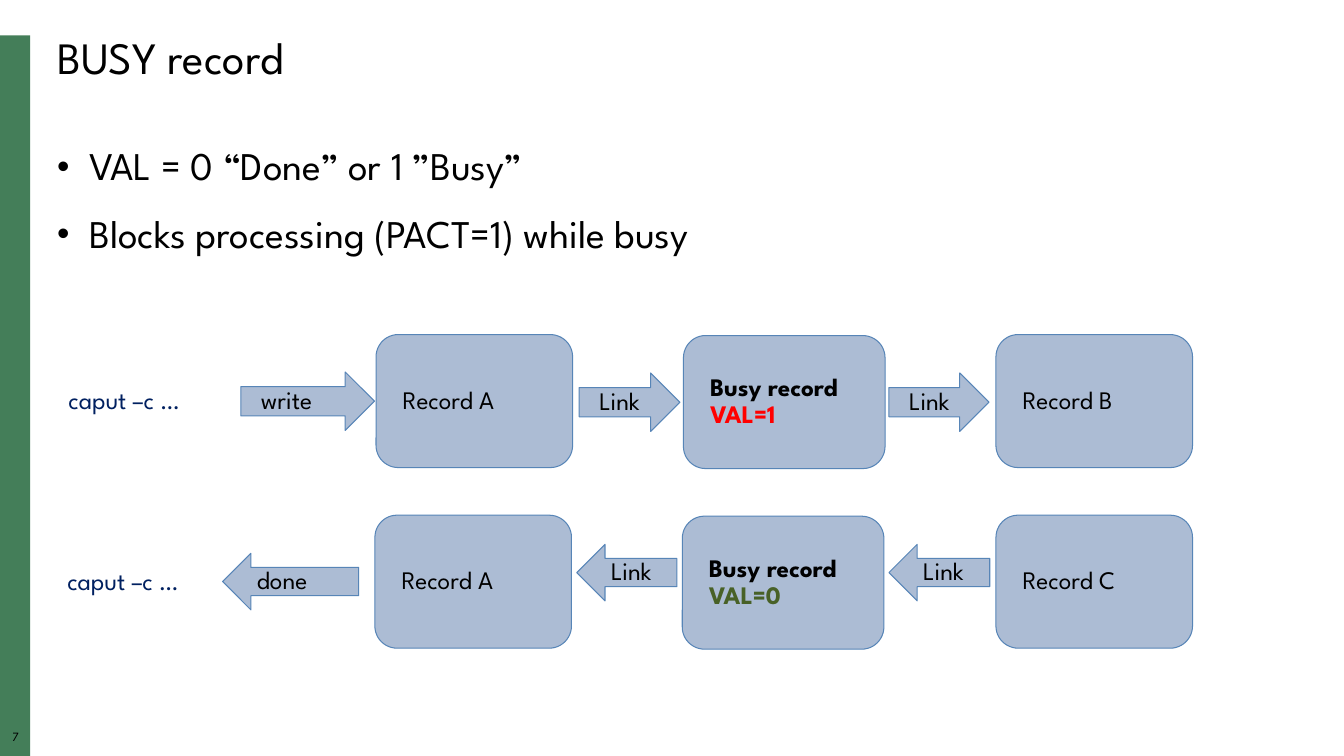
from lxml.etree import SubElement
from pptx import Presentation
from pptx.dml.color import RGBColor
from pptx.enum.shapes import MSO_SHAPE
from pptx.enum.text import MSO_ANCHOR, PP_ALIGN
from pptx.oxml.ns import qn
from pptx.util import Pt

FONT = "League Spartan"
BLACK = RGBColor(0x00, 0x00, 0x00)
GREEN_BAR = RGBColor(0x44, 0x7E, 0x59)
BOX_FILL = RGBColor(0xAC, 0xBC, 0xD4)
BOX_LINE = RGBColor(0x57, 0x85, 0xB7)
NAVY = RGBColor(0x00, 0x20, 0x60)
BUSY_RED = RGBColor(0xFF, 0x00, 0x00)
DONE_GREEN = RGBColor(0x48, 0x61, 0x27)

RECORD_HEIGHT = 95
RECORD_WIDTH = 140.4
BUSY_WIDTH = 144


def write_line(paragraph, text, size, color=BLACK, bold=False, align=PP_ALIGN.LEFT):
    paragraph.alignment = align
    paragraph.line_spacing = 0.9
    run = paragraph.add_run()
    run.text = text
    run.font.name = FONT
    run.font.size = Pt(size)
    run.font.bold = bold
    run.font.color.rgb = color


def set_insets(frame, inset):
    frame.margin_left = frame.margin_right = Pt(inset)
    frame.margin_top = frame.margin_bottom = Pt(inset)


def add_text_frame(slide, left, top, width, height):
    frame = slide.shapes.add_textbox(Pt(left), Pt(top), Pt(width), Pt(height)).text_frame
    frame.word_wrap = True
    return frame


def add_title(slide, text):
    title = slide.shapes.title
    title.left, title.top, title.width, title.height = Pt(33.8), Pt(21.6), Pt(900), Pt(42.5)
    title.text_frame.vertical_anchor = MSO_ANCHOR.MIDDLE
    write_line(title.text_frame.paragraphs[0], text, 32)


def add_bullet(paragraph):
    properties = paragraph._p.get_or_add_pPr()
    properties.set("marL", str(Pt(23)))
    properties.set("indent", str(-Pt(23)))
    color = SubElement(properties, qn("a:buClr"))
    SubElement(color, qn("a:srgbClr"), val=str(BLACK))
    SubElement(properties, qn("a:buSzPct"), val="90000")
    SubElement(properties, qn("a:buFont"), typeface="Arial")
    SubElement(properties, qn("a:buChar"), char="•")


def add_bullets(slide, points):
    frame = add_text_frame(slide, 33.8, 101.5, 900, 104.4)
    for index, point in enumerate(points):
        paragraph = frame.add_paragraph() if index else frame.paragraphs[0]
        add_bullet(paragraph)
        if index:
            paragraph.space_before = Pt(18)
        write_line(paragraph, point, 28)


def add_block(slide, kind, left, top, width, height, lines):
    """Draw a filled shape; lines holds (text, color, bold) for each paragraph."""
    block = slide.shapes.add_shape(kind, Pt(left), Pt(top), Pt(width), Pt(height))
    block.shadow.inherit = False
    block.fill.solid()
    block.fill.fore_color.rgb = BOX_FILL
    block.line.color.rgb = BOX_LINE
    block.line.width = Pt(0.75)
    frame = block.text_frame
    frame.word_wrap = True
    frame.vertical_anchor = MSO_ANCHOR.MIDDLE
    set_insets(frame, 14.4)
    for index, (text, color, bold) in enumerate(lines):
        paragraph = frame.add_paragraph() if index else frame.paragraphs[0]
        write_line(paragraph, text, 18, color, bold)


def add_flow(slide, top, shift, state, state_color, last_record, arrow_kind, arrow_height, arrows):
    """Draw one row: the command, three records and the arrows between them."""
    command = add_text_frame(slide, 41.8 + shift, top + 34.5, 117.4, 26.6)
    write_line(command.paragraphs[0], "caput –c …", 18, NAVY)

    records = [
        (268.6 + shift, 0, RECORD_WIDTH, [("Record A", BLACK, False)]),
        (488.2 + shift, 0.7, BUSY_WIDTH,
         [("Busy record", BLACK, True), (state, state_color, True)]),
        (711.4, 0, RECORD_WIDTH, [(last_record, BLACK, False)]),
    ]
    for left, drop, width, lines in records:
        add_block(slide, MSO_SHAPE.ROUNDED_RECTANGLE, left, top + drop, width,
                  RECORD_HEIGHT, lines)
    for label, left, drop, width in arrows:
        add_block(slide, arrow_kind, left, top + drop, width, arrow_height,
                  [(label, BLACK, False)])


def add_side_bar(slide, page):
    bar = slide.shapes.add_shape(MSO_SHAPE.RECTANGLE, 0, Pt(25.2), Pt(21.6), Pt(514.8))
    bar.shadow.inherit = False
    bar.fill.solid()
    bar.fill.fore_color.rgb = GREEN_BAR
    bar.line.fill.background()
    number = add_text_frame(slide, 0, 522, 22.3, 12.2)
    set_insets(number, 0)
    write_line(number.paragraphs[0], page, 9, align=PP_ALIGN.CENTER)


def main():
    deck = Presentation()
    deck.slide_width, deck.slide_height = Pt(960), Pt(540)
    slide = deck.slides.add_slide(deck.slide_layouts[5])

    add_side_bar(slide, "7")
    add_title(slide, "BUSY record")
    add_bullets(slide, ["VAL = 0 “Done” or 1 ”Busy”",
                        "Blocks processing (PACT=1) while busy"])
    add_flow(slide, 239, 0, "VAL=1", BUSY_RED, "Record B", MSO_SHAPE.RIGHT_ARROW, 41.8,
             [("write", 172, 26.7, 95.5), ("Link", 413.7, 27.4, 72), ("Link", 635, 27.4, 71.5)])
    add_flow(slide, 368, -0.8, "VAL=0", DONE_GREEN, "Record C", MSO_SHAPE.LEFT_ARROW, 40.4,
             [("done", 159, 27.2, 97.2), ("Link", 412, 20.8, 71.5), ("Link", 635, 20.8, 72)])

    deck.save("out.pptx")


if __name__ == "__main__":
    main()
